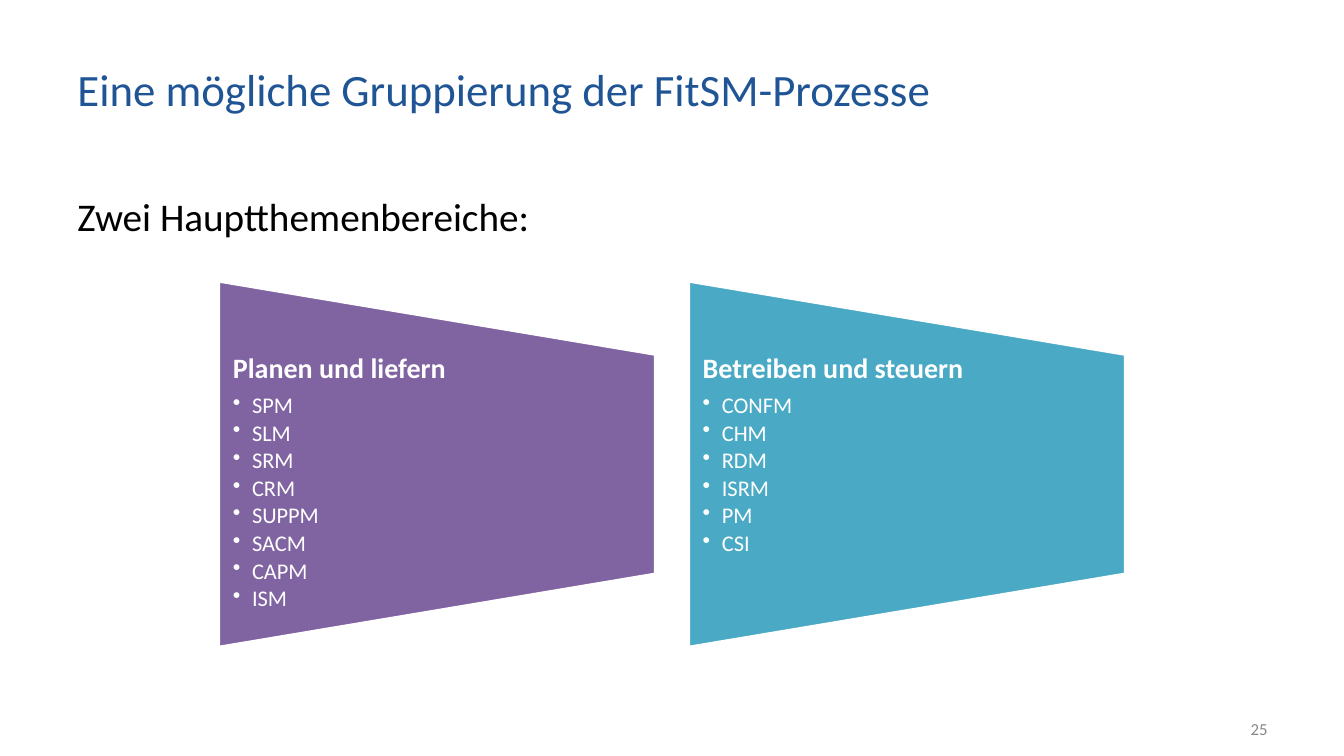
from lxml import etree
from pptx import Presentation
from pptx.dml.color import RGBColor
from pptx.enum.shapes import MSO_SHAPE
from pptx.enum.text import MSO_ANCHOR, PP_ALIGN
from pptx.oxml.ns import qn
from pptx.util import Emu, Pt

PX = 9144  # 100 px to the inch
FONT = "Calibri"
WHITE = "FFFFFF"
TRAPEZOID = MSO_SHAPE.FLOWCHART_MANUAL_OPERATION
TOP, MIDDLE = MSO_ANCHOR.TOP, MSO_ANCHOR.MIDDLE
LEFT, RIGHT = PP_ALIGN.LEFT, PP_ALIGN.RIGHT

PANEL_LEFT, PANEL_TOP, PANEL_WIDTH, PANEL_HEIGHT = 217, 279, 433, 363
PANEL_STEP = 466
AREAS = [
    ("Planen und liefern", "8064A2",
     ["SPM", "SLM", "SRM", "CRM", "SUPPM", "SACM", "CAPM", "ISM"]),
    ("Betreiben und steuern", "4AA9C5",
     ["CONFM", "CHM", "RDM", "ISRM", "PM", "CSI"]),
]


def px(length):
    return Emu(round(length * PX))


def rgb(hex_string):
    return RGBColor.from_string(hex_string)


def style_font(paragraph, size, color, bold=False):
    font = paragraph.font
    font.name, font.size, font.bold = FONT, Pt(size), bold
    font.color.rgb = rgb(color)


def add_text_frame(slide, box, anchor=TOP, inset_x=10, inset_y=5):
    frame = slide.shapes.add_textbox(*map(px, box)).text_frame
    frame.word_wrap = True
    frame.vertical_anchor = anchor
    frame.margin_left = frame.margin_right = px(inset_x)
    frame.margin_top = frame.margin_bottom = px(inset_y)
    return frame


def add_line_of_text(slide, box, text, size, color, anchor=TOP, align=LEFT):
    paragraph = add_text_frame(slide, box, anchor).paragraphs[0]
    paragraph.text = text
    paragraph.alignment = align
    style_font(paragraph, size, color)


def add_bullet(paragraph, indent):
    properties = paragraph._p.get_or_add_pPr()
    properties.set("marL", str(px(indent)))
    properties.set("indent", str(-px(indent)))
    bullet_color = etree.SubElement(properties, qn("a:buClr"))
    etree.SubElement(bullet_color, qn("a:srgbClr")).set("val", WHITE)
    etree.SubElement(properties, qn("a:buChar")).set("char", "•")


def add_trapezoid(slide, box, color):
    """Fill the box with a trapezoid whose long side is on the left."""
    left, top, width, height = box
    turn = (width - height) / 2
    trapezoid = slide.shapes.add_shape(
        TRAPEZOID, px(left + turn), px(top - turn), px(height), px(width))
    trapezoid.rotation = 270
    trapezoid.shadow.inherit = False
    trapezoid.fill.solid()
    trapezoid.fill.fore_color.rgb = rgb(color)
    trapezoid.line.color.rgb = rgb(WHITE)
    trapezoid.line.width = Pt(2)


def add_area(slide, box, heading, color, processes):
    left, top, width, height = box
    add_trapezoid(slide, box, color)
    text_box = (left, top + height / 5, width, height * 3 / 5)
    frame = add_text_frame(slide, text_box, inset_x=14, inset_y=0)
    heading_line = frame.paragraphs[0]
    heading_line.text = heading
    heading_line.line_spacing = 0.9
    style_font(heading_line, 20, WHITE, bold=True)
    for index, process in enumerate(processes):
        item = frame.add_paragraph()
        item.text = process
        item.level = 1
        item.line_spacing = 0.9
        item.space_before = Pt(2.4 if index else 7)
        add_bullet(item, 19)
        style_font(item, 16, WHITE)


def build_slide(slide):
    add_line_of_text(slide, (67, 30, 991, 115),
                     "Eine mögliche Gruppierung der FitSM-Prozesse",
                     32, "205595", MIDDLE)
    add_line_of_text(slide, (67, 186, 1200, 506),
                     "Zwei Hauptthemenbereiche:", 28, "000000")
    for column, area in enumerate(AREAS):
        box = (PANEL_LEFT + column * PANEL_STEP, PANEL_TOP,
               PANEL_WIDTH, PANEL_HEIGHT)
        add_area(slide, box, *area)
    add_line_of_text(slide, (956, 703, 311, 40), "25", 12, "888888",
                     MIDDLE, RIGHT)


def main():
    presentation = Presentation()
    presentation.slide_width, presentation.slide_height = px(1333), px(750)
    build_slide(presentation.slides.add_slide(presentation.slide_layouts[6]))
    presentation.save("out.pptx")


if __name__ == "__main__":
    main()
